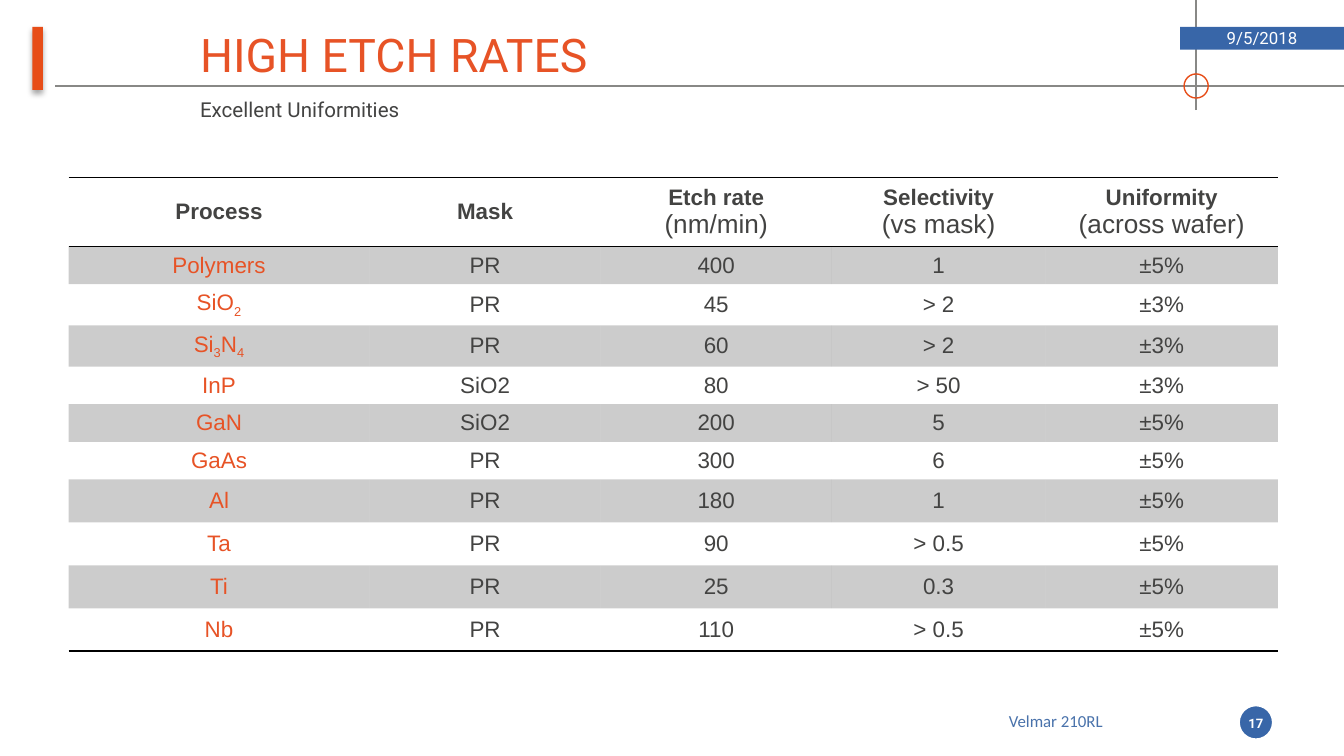
"""Build the etch rate slide with its process table."""
from itertools import groupby

from lxml.etree import SubElement
from pptx import Presentation
from pptx.dml.color import RGBColor
from pptx.enum.shapes import MSO_CONNECTOR, MSO_SHAPE
from pptx.enum.text import MSO_ANCHOR, PP_ALIGN
from pptx.oxml.ns import qn
from pptx.util import Inches, Pt

ORANGE, TITLE_ORANGE = "E74D18", "E75326"
BLUE, FOOTER_BLUE = "3866A8", "4972AB"
DARK, GREY, WHITE, BLACK = "434342", "888886", "FFFFFF", "000000"
NO_STYLE = "{2D5ABB26-0587-4C30-8999-92F81FD0307C}"

COLUMN_WIDTHS = [2.24, 1.72, 1.72, 1.59, 1.73]
ROW_HEIGHTS = [0.39] + [0.26] * 6 + [0.32] * 4
HEADERS = [
    ["Process"],
    ["Mask"],
    ["Etch rate", "(nm/min)"],
    ["Selectivity", "(vs mask)"],
    ["Uniformity", "(across wafer)"],
]
PROCESSES = [
    ["Polymers", "PR", "400", "1", "±5%"],
    ["SiO2", "PR", "45", "> 2", "±3%"],
    ["Si3N4", "PR", "60", "> 2", "±3%"],
    ["InP", "SiO2", "80", "> 50", "±3%"],
    ["GaN", "SiO2", "200", "5", "±5%"],
    ["GaAs", "PR", "300", "6", "±5%"],
    ["Al", "PR", "180", "1", "±5%"],
    ["Ta", "PR", "90", "> 0.5", "±5%"],
    ["Ti", "PR", "25", "0.3", "±5%"],
    ["Nb", "PR", "110", "> 0.5", "±5%"],
]


def rgb(color):
    """Turn a hex string into a colour."""
    return RGBColor.from_string(color)


def style_paragraph(paragraph, size, color, font="Arial", bold=False, align=PP_ALIGN.CENTER):
    """Set the alignment and font of a paragraph."""
    paragraph.alignment = align
    paragraph.font.name = font
    paragraph.font.size = Pt(size)
    paragraph.font.bold = bold
    paragraph.font.color.rgb = rgb(color)


def add_line(slide, start, end):
    """Draw a thin grey guide line."""
    points = [Inches(value) for value in (*start, *end)]
    connector = slide.shapes.add_connector(MSO_CONNECTOR.STRAIGHT, *points)
    connector.line.color.rgb = rgb(GREY)
    connector.line.width = Pt(0.75)
    SubElement(connector._element.spPr, qn("a:effectLst"))


def add_shape(slide, kind, box, fill=None, line=None, line_width=0.75):
    """Add a preset shape with an optional fill and outline."""
    shape = slide.shapes.add_shape(kind, *[Inches(value) for value in box])
    shape.shadow.inherit = False
    if fill:
        shape.fill.solid()
        shape.fill.fore_color.rgb = rgb(fill)
    else:
        shape.fill.background()
    if line:
        shape.line.color.rgb = rgb(line)
        shape.line.width = Pt(line_width)
    else:
        shape.line.fill.background()
    return shape


def add_soft_shadow(shape):
    """Give a shape a soft shadow straight below it."""
    effects = shape._element.spPr.find(qn("a:effectLst"))
    shadow = SubElement(effects, qn("a:outerShdw"), blurRad=str(Pt(3.1)),
                        dist=str(Pt(1.8)), dir="5400000", rotWithShape="0")
    color = SubElement(shadow, qn("a:srgbClr"), val=BLACK)
    SubElement(color, qn("a:alpha"), val="35000")


def write_text(shape, text, size, color, anchor=MSO_ANCHOR.MIDDLE, **style):
    """Write one styled paragraph into a shape."""
    frame = shape.text_frame
    frame.word_wrap = True
    frame.vertical_anchor = anchor
    paragraph = frame.paragraphs[0]
    paragraph.text = text
    style_paragraph(paragraph, size, color, **style)


def add_text(slide, box, text, size, color, **style):
    """Add a text box with one paragraph."""
    text_box = slide.shapes.add_textbox(*[Inches(value) for value in box])
    write_text(text_box, text, size, color, font="Roboto", **style)


def set_borders(cell, ruled_sides):
    """Rule the given sides of a cell in black and clear the others."""
    properties = cell._tc.get_or_add_tcPr()
    for side in ("lnL", "lnR", "lnT", "lnB"):
        line = SubElement(properties, qn(f"a:{side}"), w=str(Pt(1)))
        if side in ruled_sides:
            fill = SubElement(line, qn("a:solidFill"))
            SubElement(fill, qn("a:srgbClr"), val=BLACK)
        else:
            SubElement(line, qn("a:noFill"))


def fill_cell(cell, shaded):
    """Shade a cell with translucent black or leave it clear."""
    if not shaded:
        cell.fill.background()
        return
    cell.fill.solid()
    cell.fill.fore_color.rgb = rgb(BLACK)
    color = cell._tc.tcPr.find(f"{qn('a:solidFill')}/{qn('a:srgbClr')}")
    SubElement(color, qn("a:alpha"), val="20000")


def write_header(cell, lines):
    """Write a bold heading and its unit line."""
    cell.text = "\n".join(lines)
    for index, paragraph in enumerate(cell.text_frame.paragraphs):
        style_paragraph(paragraph, 14 if index else 12, DARK, bold=index == 0)


def write_formula(cell, formula):
    """Write a chemical formula with its digits as subscripts."""
    paragraph = cell.text_frame.paragraphs[0]
    for is_digit, letters in groupby(formula, str.isdigit):
        run = paragraph.add_run()
        run.text = "".join(letters)
        if is_digit:
            run._r.get_or_add_rPr().set("baseline", "-25000")
    style_paragraph(paragraph, 12, TITLE_ORANGE)


def write_value(cell, value):
    """Write a plain table value."""
    cell.text = value
    style_paragraph(cell.text_frame.paragraphs[0], 12, DARK)


def add_process_table(slide):
    """Add the table of etch results."""
    rows = [HEADERS] + PROCESSES
    frame = slide.shapes.add_table(len(rows), len(HEADERS), Inches(0.51), Inches(1.32),
                                   Inches(9), Inches(sum(ROW_HEIGHTS)))
    table = frame.table
    table._tbl.tblPr.find(qn("a:tableStyleId")).text = NO_STYLE
    for column, width in zip(table.columns, COLUMN_WIDTHS):
        column.width = Inches(width)
    for row, height in zip(table.rows, ROW_HEIGHTS):
        row.height = Inches(height)
    ruled_sides = {0: ("lnT", "lnB"), 1: ("lnT",), len(PROCESSES): ("lnB",)}
    for row_index, values in enumerate(rows):
        for column_index, value in enumerate(values):
            cell = table.cell(row_index, column_index)
            cell.vertical_anchor = MSO_ANCHOR.MIDDLE
            cell.margin_top = cell.margin_bottom = Inches(0.04)
            if row_index == 0:
                write_header(cell, value)
            elif column_index == 0:
                write_formula(cell, value)
            else:
                write_value(cell, value)
            set_borders(cell, ruled_sides.get(row_index, ()))
            fill_cell(cell, row_index % 2 == 1)


def main():
    """Build and save the slide."""
    presentation = Presentation()
    presentation.slide_width = Inches(10)
    presentation.slide_height = Inches(10 * 9 / 16)
    slide = presentation.slides.add_slide(presentation.slide_layouts[6])

    add_line(slide, (0.41, 0.64), (10, 0.64))
    add_line(slide, (8.9, 0.82), (8.9, 0))
    add_shape(slide, MSO_SHAPE.OVAL, (8.81, 0.55, 0.18, 0.18), line=ORANGE)
    accent_bar = add_shape(slide, MSO_SHAPE.RECTANGLE, (0.24, 0.2, 0.08, 0.47), ORANGE)
    add_soft_shadow(accent_bar)
    add_shape(slide, MSO_SHAPE.OVAL, (9.21, 5.24, 0.27, 0.27), BLUE, WHITE, 2.25)

    add_text(slide, (1.39, 0.14, 7.39, 0.52), "HIGH ETCH RATES", 24.8, TITLE_ORANGE,
             align=PP_ALIGN.LEFT)
    date = add_shape(slide, MSO_SHAPE.RECTANGLE, (8.78, 0.2, 1.22, 0.17), BLUE)
    write_text(date, "9/5/2018", 9, WHITE, font="Roboto")
    footer = add_shape(slide, MSO_SHAPE.RECTANGLE, (6.81, 5.24, 2.09, 0.25), WHITE)
    write_text(footer, "Velmar 210RL", 9, FOOTER_BLUE, font="Calibri")
    add_text(slide, (9.18, 5.24, 0.33, 0.28), "17", 7, WHITE, bold=True)
    add_text(slide, (1.39, 0.67, 2.76, 0.28), "Excellent Uniformities", 11, DARK,
             anchor=MSO_ANCHOR.TOP, align=PP_ALIGN.LEFT)
    add_process_table(slide)

    presentation.save("out.pptx")


if __name__ == "__main__":
    main()
